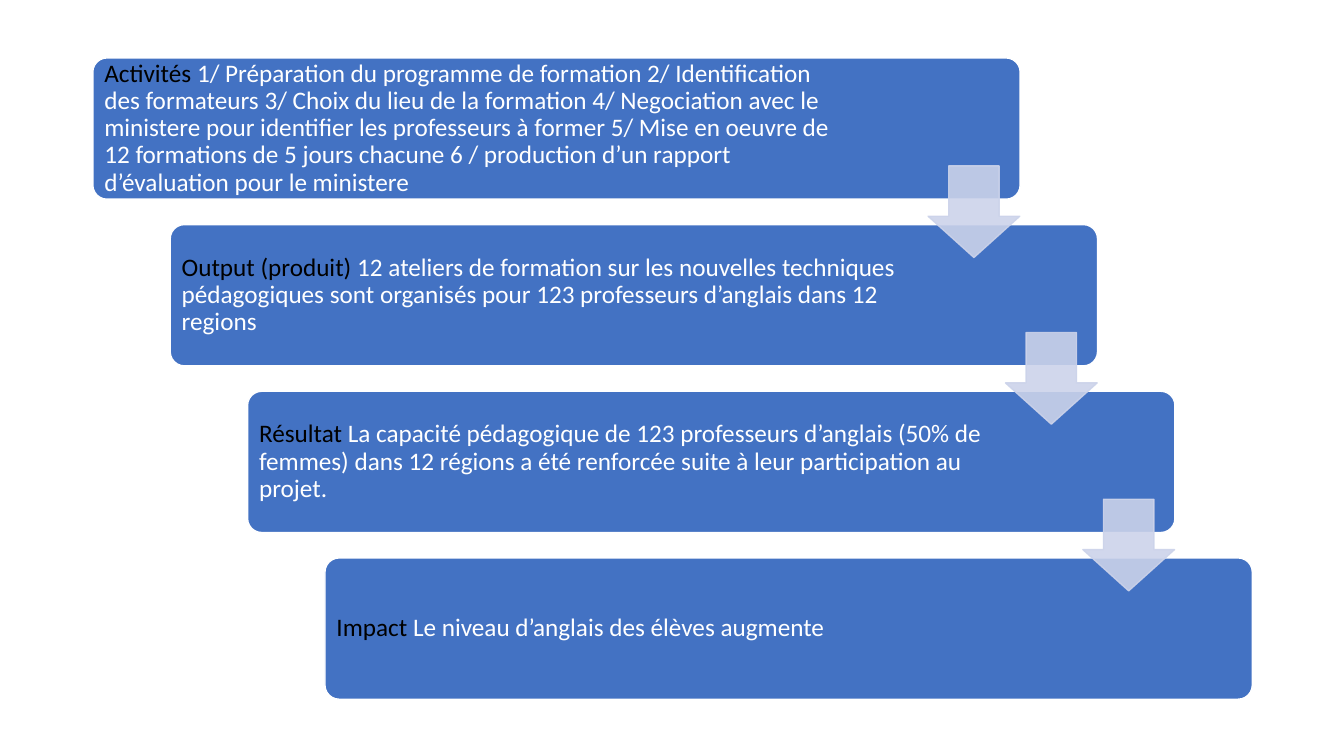
from dataclasses import dataclass

from lxml import etree
from pptx import Presentation
from pptx import util as u
from pptx.dml.color import RGBColor
from pptx.enum import shapes, text
from pptx.oxml import ns


@dataclass(frozen=True)
class Theme:
    box: str = "4372C3"
    arrow: str = "CCD3EA"
    light: str = "FFFFFF"
    dark: str = "000000"
    font: str = "Calibri"
    size: int = 18
    line: int = 1
    arrow_alpha: int = 89


THEME = Theme()
STEP_X, STEP_Y = 1.95, 4.2
BOX_LEFT, BOX_TOP, BOX_WIDTH, BOX_HEIGHT = 2.34, 1.46, 23.37, 3.56
ARROW_LEFT, ARROW_TOP, ARROW_SIZE = 23.39, 4.18, 2.31
TEXT_MARGIN = 0.1
FIRST_TEXT_WIDTH, TEXT_WIDTH = 19.23, 18.9

STAGES = [
    ("Activités ", "1/ Préparation du programme de formation 2/ Identification des formateurs "
     "3/ Choix du lieu de la formation 4/ Negociation avec le ministere pour identifier "
     "les professeurs à former 5/ Mise en oeuvre de 12 formations de 5 jours chacune "
     "6 / production d’un rapport d’évaluation pour le ministere"),
    ("Output (produit)", " 12 ateliers de formation sur les nouvelles techniques pédagogiques "
     "sont organisés pour 123 professeurs d’anglais dans 12 regions"),
    ("Résultat ", "La capacité pédagogique de 123 professeurs d’anglais (50% de femmes) "
     "dans 12 régions a été renforcée suite à leur participation au projet."),
    ("Impact ", "Le niveau d’anglais des élèves augmente"),
]


def set_attributes(target, values):
    for name, value in values.items():
        setattr(target, name, value)


def lengths(*values):
    return [u.Cm(value) for value in values]


def add_filled_shape(group, kind, frame, adjustments, fill, line):
    shape = group.shapes.add_shape(kind, *lengths(*frame))
    shape.shadow.inherit = False
    for index, value in enumerate(adjustments):
        shape.adjustments[index] = value
    shape.fill.solid()
    shape.fill.fore_color.rgb = RGBColor.from_string(fill)
    shape.line.color.rgb = RGBColor.from_string(line)
    shape.line.width = u.Pt(THEME.line)
    return shape


def add_stage_box(group, left, top):
    add_filled_shape(group, shapes.MSO_SHAPE.ROUNDED_RECTANGLE,
                     (left, top, BOX_WIDTH, BOX_HEIGHT), [0.1], THEME.box, THEME.light)


def add_stage_text(group, left, top, width, label, description):
    height = BOX_HEIGHT - 2 * TEXT_MARGIN
    box = group.shapes.add_textbox(
        *lengths(left + TEXT_MARGIN, top + TEXT_MARGIN, width, height))
    inset = u.Cm(0.19)
    set_attributes(box.text_frame, {
        "word_wrap": True,
        "auto_size": text.MSO_AUTO_SIZE.NONE,
        "vertical_anchor": text.MSO_ANCHOR.MIDDLE,
        "margin_left": inset, "margin_right": inset,
        "margin_top": inset, "margin_bottom": inset,
    })
    paragraph = box.text_frame.paragraphs[0]
    set_attributes(paragraph, {"line_spacing": 0.9, "alignment": text.PP_ALIGN.LEFT})
    for wording, color in ((label, THEME.dark), (description, THEME.light)):
        run = paragraph.add_run()
        run.text = wording
        set_attributes(run.font, {"name": THEME.font, "size": u.Pt(THEME.size)})
        run.font.color.rgb = RGBColor.from_string(color)


def add_stage_arrow(group, left, top):
    arrow = add_filled_shape(group, shapes.MSO_SHAPE.DOWN_ARROW,
                             (left, top, ARROW_SIZE, ARROW_SIZE), [0.55, 0.45],
                             THEME.arrow, THEME.arrow)
    for color in arrow.element.spPr.iter(ns.qn("a:srgbClr")):
        etree.SubElement(color, ns.qn("a:alpha"), val=str(THEME.arrow_alpha * 1000))


def main():
    presentation = Presentation()
    set_attributes(presentation, {"slide_width": u.Cm(33.87), "slide_height": u.Cm(19.05)})
    slide = presentation.slides.add_slide(presentation.slide_layouts[6])
    group = slide.shapes.add_group_shape()
    for index, (label, description) in enumerate(STAGES):
        left, top = BOX_LEFT + index * STEP_X, BOX_TOP + index * STEP_Y
        width = TEXT_WIDTH if index else FIRST_TEXT_WIDTH
        add_stage_box(group, left, top)
        add_stage_text(group, left, top, width, label, description)
    for index in range(len(STAGES) - 1):
        add_stage_arrow(group, ARROW_LEFT + index * STEP_X, ARROW_TOP + index * STEP_Y)
    presentation.save("out.pptx")


if __name__ == "__main__":
    main()
